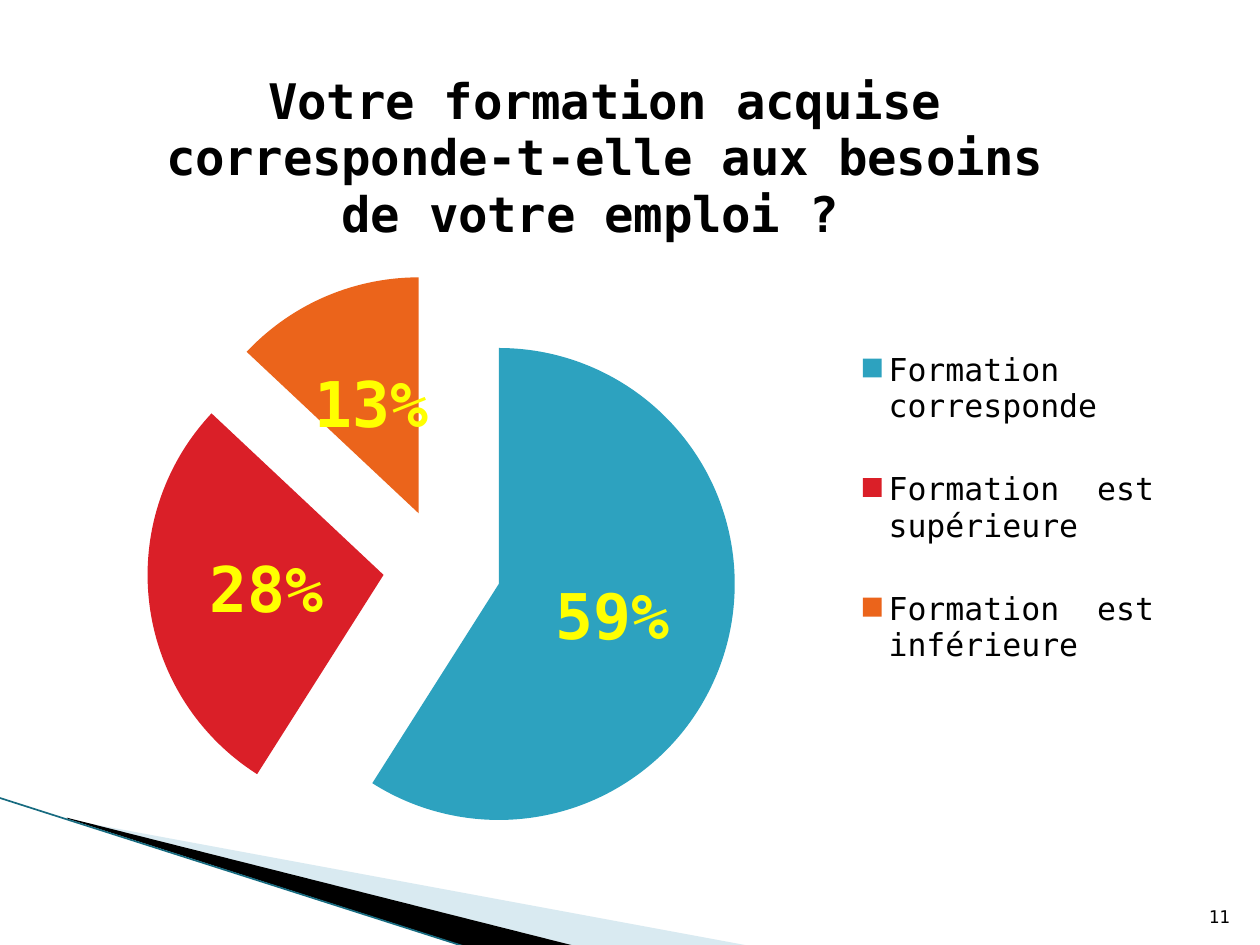
from lxml import etree
from pptx import Presentation
from pptx.chart.data import CategoryChartData
from pptx.dml.color import RGBColor
from pptx.enum.chart import XL_CHART_TYPE as ChartType
from pptx.enum.chart import XL_LABEL_POSITION as LabelPos
from pptx.enum.chart import XL_LEGEND_POSITION as LegendPos
from pptx.enum.shapes import MSO_CONNECTOR as Connector
from pptx.enum.text import MSO_ANCHOR as Anchor
from pptx.enum.text import PP_ALIGN as Align
from pptx.oxml import parse_xml
from pptx.oxml.ns import nsdecls, qn
from pptx.util import Pt

COLORS = {
    "black": "000000", "yellow": "FFFF00", "pale": "A0CBDC", "edge": "176B80",
    "blue": "2DA2BF", "red": "DA1F28", "orange": "EB641B",
}
FONT = "DejaVu Sans Mono"


def rgb(name):
    return RGBColor.from_string(COLORS[name])


def style(font, size, color="black", bold=False):
    font.name, font.size, font.bold = FONT, Pt(size), bold
    font.color.rgb = rgb(color)


prs = Presentation()
prs.slide_width, prs.slide_height = Pt(720), Pt(540)
slide = prs.slides.add_slide(prs.slide_layouts[6])
shapes = slide.shapes

# Swoosh in the bottom left corner
swoosh = [
    ("pale", 40, [(39.6, 468.5), (428.4, 540.5), (328.3, 540.5), (39.6, 468)]),
    ("black", 100, [(38.2, 467.3), (329, 540.7), (267.8, 541.4), (38.9, 468)]),
]
for color, opacity, points in swoosh:
    corners = [(Pt(x), Pt(y)) for x, y in points]
    builder = shapes.build_freeform(*corners[0], scale=1.0)
    builder.add_line_segments(corners[1:], close=True)
    band = builder.convert_to_shape()
    band.shadow.inherit = False
    band.fill.solid()
    band.fill.fore_color.rgb = rgb(color)
    band.line.fill.background()
    if opacity < 100:
        fill_color = band.fill._xPr.find(qn("a:solidFill"))[0]
        etree.SubElement(fill_color, qn("a:alpha"), val=str(opacity * 1000))

edge = shapes.add_connector(Connector.STRAIGHT, Pt(-0.7), Pt(455.8), Pt(267.1), Pt(541.4))
edge.line.color.rgb = rgb("edge")
edge.line.width = Pt(0.95)
etree.SubElement(edge._element.spPr, qn("a:effectLst"))

# Exploded pie of the answers
answers = CategoryChartData(number_format="0%")
answers.categories = [
    "Formation corresponde ", "Formation  est supérieure ", "Formation  est inférieure",
]
answers.add_series("Series 1", (0.59, 0.28, 0.13))
chart = shapes.add_chart(
    ChartType.PIE_EXPLODED, Pt(25.2), Pt(20.9), Pt(640.8), Pt(481.7), answers
).chart
style(chart.font, 10)

chart.has_title = True
question = chart.chart_title.text_frame.paragraphs[0].add_run()
question.text = "Votre formation acquise corresponde-t-elle aux besoins de votre emploi ? "
style(question.font, 28, bold=True)
chart.chart_title.include_in_layout = False

chart.has_legend = True
chart.legend.position = LegendPos.RIGHT
chart.legend.include_in_layout = False
style(chart.legend.font, 18)

pie = chart.plots[0]
pie.vary_by_categories = True
series = pie.series[0]
for index, color in enumerate(("blue", "red", "orange")):
    slice_fill = series.points[index].format.fill
    slice_fill.solid()
    slice_fill.fore_color.rgb = rgb(color)
explosion = series._element.find(qn("c:explosion"))
if explosion is not None:
    explosion.set("val", "25")

pie.has_data_labels = True
labels = pie.data_labels
labels.show_value, labels.show_percentage = True, False
labels.number_format, labels.number_format_is_linked = "0%", False
labels.position = LabelPos.CENTER
style(labels.font, 36, "yellow", bold=True)

# Fixed places inside the chart, as fractions of its size
chart_xml = chart._chartSpace.chart
places = [
    (chart_xml.plotArea, "inner", dict(x=0.09, y=0.28, w=0.53, h=0.7)),
    (chart.legend._element, None, dict(x=0.72, y=0.32, w=0.28, h=0.48)),
]
for part, target, box in places:
    for old in part.findall(qn("c:layout")):
        part.remove(old)
    layout = parse_xml(f"<c:layout {nsdecls('c')}><c:manualLayout/></c:layout>")
    settings = {"layoutTarget": target} if target else {}
    settings.update(xMode="edge", yMode="edge", **box)
    for tag, value in settings.items():
        etree.SubElement(layout[0], qn(f"c:{tag}"), val=str(value))
    if target:
        part.insert(0, layout)
    else:
        part.find(qn("c:legendPos")).addnext(layout)

# Page number
page_box = shapes.add_textbox(Pt(681.1), Pt(504.7), Pt(28.8), Pt(28.8))
page = page_box.text_frame
page.word_wrap = True
page.vertical_anchor = Anchor.BOTTOM
page.paragraphs[0].alignment = Align.RIGHT
number = page.paragraphs[0].add_run()
number.text = "11"
style(number.font, 10)
page.margin_right = Pt(7.2)

prs.save("out.pptx")
